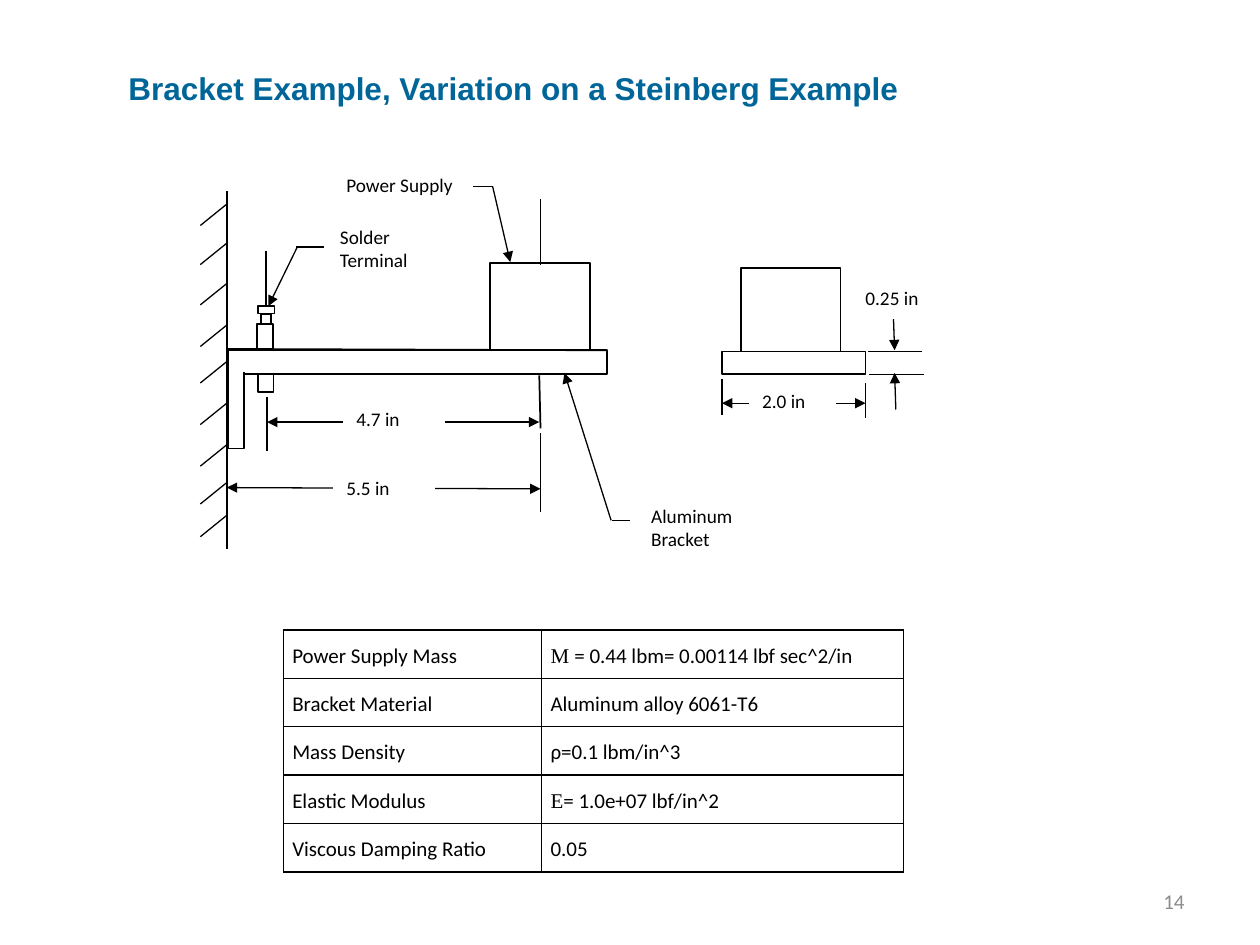
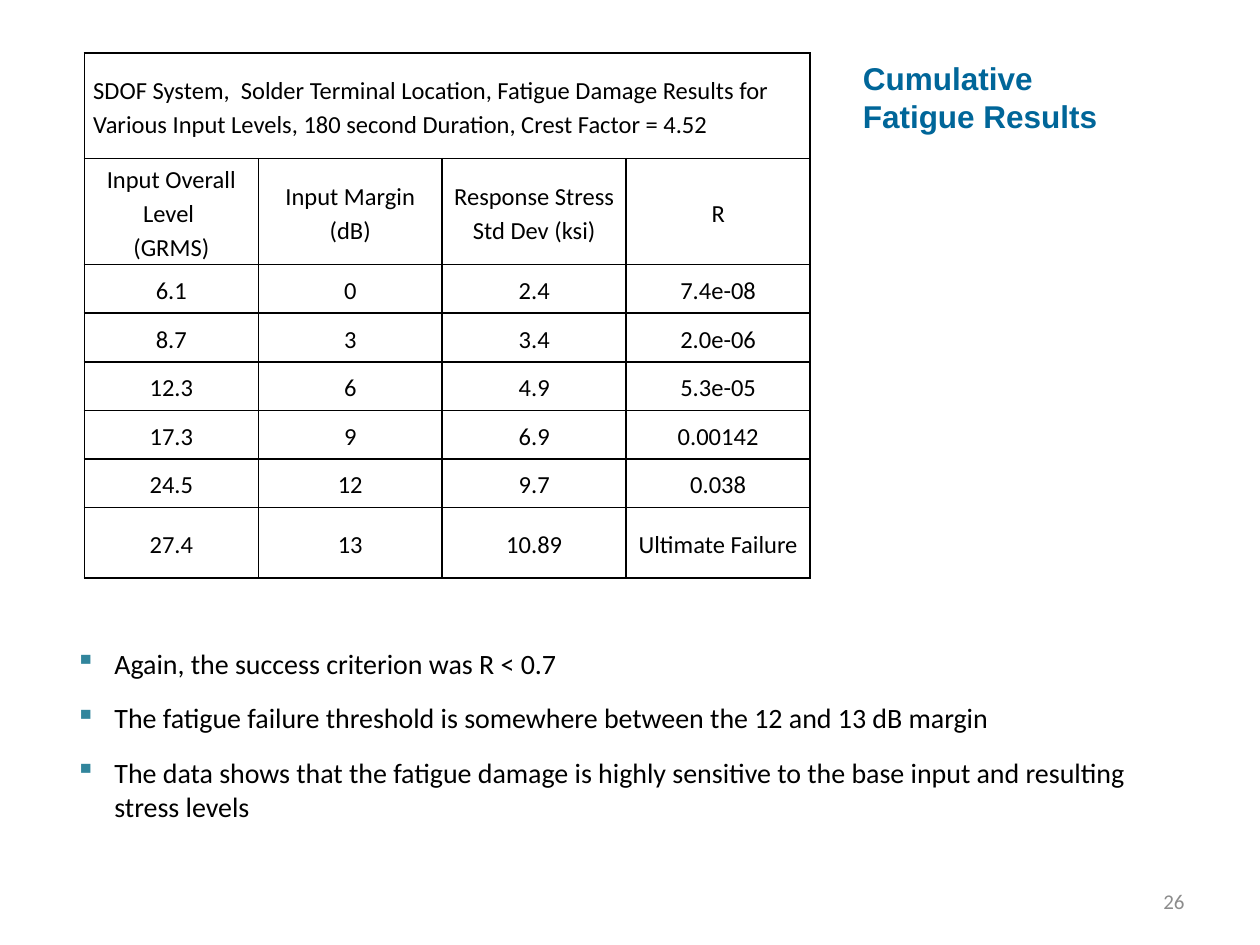
from dataclasses import dataclass

from lxml.etree import SubElement
from pptx import Presentation
from pptx.dml.color import RGBColor
from pptx.enum.shapes import MSO_CONNECTOR, MSO_SHAPE
from pptx.enum.text import MSO_ANCHOR, MSO_AUTO_SIZE, PP_ALIGN
from pptx.oxml.ns import qn
from pptx.slide import Slide
from pptx.table import Table
from pptx.util import Inches, Pt

BLACK = RGBColor(0x00, 0x00, 0x00)
WHITE = RGBColor(0xFF, 0xFF, 0xFF)
TITLE_BLUE = RGBColor(0x00, 0x66, 0x99)
NUMBER_GRAY = RGBColor(0x8C, 0x8C, 0x8C)
BULLET_TEAL = RGBColor(0x31, 0x85, 0x9C)
BODY_FONT = "Calibri"
TITLE_FONT = "Arial"
SYMBOL_FONT = "Times New Roman"
THIN = 0.75
WALL_X = 1.8


@dataclass(frozen=True)
class Run:
    text: str
    font: str = BODY_FONT


@dataclass(frozen=True)
class Box:
    left: float
    top: float
    width: float
    height: float
    outline: RGBColor = BLACK
    weight: float = 1


@dataclass(frozen=True)
class Label:
    text: str
    left: float
    top: float
    width: float
    height: float


@dataclass(frozen=True)
class Line:
    start: tuple[float, float]
    end: tuple[float, float]
    weight: float = THIN
    head: bool = False
    tail: bool = False


PARTS = [
    Box(3.89, 2.09, 0.79, 0.69),
    Box(5.88, 2.13, 0.79, 0.67),
    Box(2.04, 2.57, 0.13, 0.2),
    Box(2.05, 2.81, 0.12, 0.3),
    Box(2.07, 2.49, 0.08, 0.08),
    Box(2.05, 2.43, 0.13, 0.06),
    Box(1.81, 2.78, 3.01, 0.19),
    Box(1.81, 2.78, 0.13, 0.78),
    Box(1.9, 2.79, 0.14, 0.16, WHITE),
    Box(5.73, 2.79, 1.14, 0.18),
]

EDGES_AND_AXES = [
    Line((WALL_X, 1.52), (WALL_X, 4.36), 1),
    Line((4.29, 1.58), (4.29, 2.1), 1),
    Line((4.28, 2.98), (4.29, 3.4), 1),
    Line((2.12, 3.15), (2.12, 3.58), 1),
    Line((2.11, 1.99), (2.11, 2.43), 1),
    Line((1.81, 2.77), (4.81, 2.78), 1),
]

EXTENSIONS = [
    Line((6.89, 2.79), (7.32, 2.79)),
    Line((6.9, 2.97), (7.33, 2.97)),
    Line((5.73, 3.01), (5.73, 3.29)),
    Line((6.87, 3.04), (6.87, 3.32)),
    Line((4.29, 3.44), (4.29, 4.06)),
]

DIMENSIONS = [
    Line((2.12, 3.35), (4.28, 3.35), head=True, tail=True),
    Line((1.8, 3.87), (4.29, 3.88), head=True, tail=True),
    Line((5.73, 3.2), (6.87, 3.2), head=True, tail=True),
    Line((7.09, 2.49), (7.1, 2.78), tail=True),
    Line((7.11, 3.25), (7.1, 2.96), tail=True),
]

LEADERS = [
    Line((3.91, 1.48), (4.05, 2.08), tail=True),
    Line((3.91, 1.48), (3.68, 1.48)),
    Line((2.36, 1.96), (2.13, 2.43), tail=True),
    Line((2.35, 1.96), (2.57, 1.96)),
    Line((4.85, 4.13), (4.48, 2.96), tail=True),
    Line((4.86, 4.13), (5, 4.13)),
]

DIMENSION_GAP = Box(6.06, 3.09, 0.57, 0.26, WHITE, THIN)

LABELS = [
    Label("Power Supply", 2.65, 1.33, 1.1, 0.27),
    Label("Solder Terminal", 2.6, 1.74, 0.94, 0.5),
    Label("Aluminum Bracket", 5.07, 3.95, 0.94, 0.5),
    Label("4.7 in", 2.73, 3.18, 0.8, 0.31),
    Label("5.5 in", 2.65, 3.73, 0.8, 0.31),
    Label("2.0 in", 5.95, 3.04, 0.63, 0.31),
    Label("0.25 in", 6.77, 2.22, 0.77, 0.31),
]

HATCH_TOPS = [1.62, 1.93, 2.25, 2.58, 2.87, 3.2, 3.53, 3.83, 4.09]

PROPERTIES = [
    ("Power Supply Mass", [Run("M ", SYMBOL_FONT), Run("= 0.44 lbm= 0.00114 lbf sec^2/in")]),
    ("Bracket Material", [Run("Aluminum alloy 6061-T6")]),
    ("Mass Density", [Run("ρ=0.1 lbm/in^3")]),
    ("Elastic Modulus", [Run("E", SYMBOL_FONT), Run("= 1.0e+07 lbf/in^2")]),
    ("Viscous Damping Ratio", [Run("0.05")]),
]

RESULTS_CAPTION = (
    "SDOF System,  Solder Terminal Location, Fatigue Damage Results for "
    "Various Input Levels, 180 second Duration, Crest Factor = 4.52"
)
RESULTS = [
    ("Input Overall Level \n(GRMS)", "Input Margin (dB)", "Response Stress Std Dev (ksi)", "R"),
    ("6.1", "0", "2.4", "7.4e-08"),
    ("8.7", "3", "3.4", "2.0e-06"),
    ("12.3", "6", "4.9", "5.3e-05"),
    ("17.3", "9", "6.9", "0.00142"),
    ("24.5", "12", "9.7", "0.038"),
    ("27.4", "13", "10.89", "Ultimate Failure"),
]

CONCLUSIONS = [
    "Again, the success criterion was R < 0.7",
    "The fatigue failure threshold is somewhere between the 12 and 13 dB margin",
    "The data shows that the fatigue damage is highly sensitive to the base input "
    "and resulting stress levels",
]


def add_run(paragraph, content: Run, size: float, color: RGBColor = BLACK, bold: bool = False) -> None:
    run = paragraph.add_run()
    run.text = content.text
    run.font.name = content.font
    run.font.size = Pt(size)
    run.font.color.rgb = color
    run.font.bold = bold


def add_text_box(slide: Slide, left: float, top: float, width: float, height: float):
    shape = slide.shapes.add_textbox(Inches(left), Inches(top), Inches(width), Inches(height))
    shape.text_frame.word_wrap = True
    return shape.text_frame


def add_title(slide: Slide, text: str, left: float, top: float, width: float, height: float) -> None:
    frame = add_text_box(slide, left, top, width, height)
    frame.auto_size = MSO_AUTO_SIZE.SHAPE_TO_FIT_TEXT
    add_run(frame.paragraphs[0], Run(text, TITLE_FONT), 18, TITLE_BLUE, True)


def add_slide_number(slide: Slide, number: int) -> None:
    frame = add_text_box(slide, 7.17, 6.95, 2.33, 0.4)
    frame.vertical_anchor = MSO_ANCHOR.MIDDLE
    frame.paragraphs[0].alignment = PP_ALIGN.RIGHT
    add_run(frame.paragraphs[0], Run(str(number)), 12, NUMBER_GRAY)


def add_box(slide: Slide, box: Box):
    shape = slide.shapes.add_shape(
        MSO_SHAPE.RECTANGLE, Inches(box.left), Inches(box.top), Inches(box.width), Inches(box.height)
    )
    shape.shadow.inherit = False
    shape.fill.solid()
    shape.fill.fore_color.rgb = WHITE
    shape.line.color.rgb = box.outline
    shape.line.width = Pt(box.weight)
    return shape


def add_label(slide: Slide, label: Label) -> None:
    frame = add_box(slide, Box(label.left, label.top, label.width, label.height, WHITE, THIN)).text_frame
    frame.word_wrap = True
    frame.vertical_anchor = MSO_ANCHOR.TOP
    paragraph = frame.paragraphs[0]
    paragraph.alignment = PP_ALIGN.LEFT
    paragraph.space_after = Pt(10)
    add_run(paragraph, Run(label.text), 11)


def add_line(slide: Slide, line: Line) -> None:
    connector = slide.shapes.add_connector(
        MSO_CONNECTOR.STRAIGHT, *(Inches(value) for value in line.start + line.end)
    )
    connector.line.color.rgb = BLACK
    connector.line.width = Pt(line.weight)
    properties = connector.element.spPr
    outline = properties.find(qn("a:ln"))
    for tag, has_arrow in (("a:headEnd", line.head), ("a:tailEnd", line.tail)):
        if has_arrow:
            SubElement(outline, qn(tag), type="triangle")
    SubElement(properties, qn("a:effectLst"))


def add_plain_table(
    slide: Slide, row_count: int, widths: list[float], left: float, top: float, height: float
) -> Table:
    table = slide.shapes.add_table(
        row_count, len(widths), Inches(left), Inches(top), Inches(sum(widths)), Inches(height)
    ).table
    table.first_row = table.horz_banding = False
    for column, width in zip(table.columns, widths):
        column.width = Inches(width)
    for cell in table.iter_cells():
        cell.margin_left = cell.margin_right = Inches(0.07)
        cell.margin_top = cell.margin_bottom = 0
        cell.vertical_anchor = MSO_ANCHOR.MIDDLE
        properties = cell._tc.get_or_add_tcPr()
        for side in ("L", "R", "T", "B"):
            border = SubElement(properties, qn(f"a:ln{side}"), w=str(Pt(1)))
            fill = SubElement(border, qn("a:solidFill"))
            SubElement(fill, qn("a:srgbClr"), val=str(BLACK))
        cell.fill.background()
    return table


def fill_cell(cell, paragraphs: list[list[Run]], size: float, alignment: PP_ALIGN = PP_ALIGN.LEFT) -> None:
    for index, runs in enumerate(paragraphs):
        frame = cell.text_frame
        paragraph = frame.add_paragraph() if index else frame.paragraphs[0]
        paragraph.alignment = alignment
        paragraph.line_spacing = 1.15
        for run in runs:
            add_run(paragraph, run, size)


def add_bullets(slide: Slide, texts: list[str]) -> None:
    frame = add_text_box(slide, 0.5, 5.08, 8.58, 1.51)
    frame.auto_size = MSO_AUTO_SIZE.SHAPE_TO_FIT_TEXT
    for index, text in enumerate(texts):
        paragraph = frame.add_paragraph() if index else frame.paragraphs[0]
        paragraph.space_before = paragraph.space_after = Pt(6)
        properties = paragraph._p.get_or_add_pPr()
        properties.set("marL", str(Inches(0.31)))
        properties.set("indent", str(-Inches(0.31)))
        color = SubElement(properties, qn("a:buClr"))
        SubElement(color, qn("a:srgbClr"), val=str(BULLET_TEAL))
        SubElement(properties, qn("a:buChar"), char="▪")
        add_run(paragraph, Run(text), 16)


def build_bracket_slide(slide: Slide) -> None:
    add_slide_number(slide, 14)
    add_title(slide, "Bracket Example, Variation on a Steinberg Example", 0.92, 0.5, 7.42, 0.4)
    for part in PARTS:
        add_box(slide, part)
    for line in EDGES_AND_AXES + EXTENSIONS + DIMENSIONS + LEADERS:
        add_line(slide, line)
    add_box(slide, DIMENSION_GAP)
    for label in LABELS:
        add_label(slide, label)
    for top in HATCH_TOPS:
        add_line(slide, Line((WALL_X, top), (WALL_X - 0.21, top + 0.17)))
    table = add_plain_table(slide, len(PROPERTIES), [2.05, 2.87], 2.25, 5, 1.92)
    for row, (name, value) in enumerate(PROPERTIES):
        fill_cell(table.cell(row, 0), [[Run(name)]], 12)
        fill_cell(table.cell(row, 1), [value], 12)


def build_results_slide(slide: Slide) -> None:
    add_slide_number(slide, 26)
    height, tall_row, last_row = 4.17, 0.84, 0.56
    table = add_plain_table(slide, len(RESULTS) + 1, [1.38, 1.46, 1.46, 1.46], 0.67, 0.42, height)
    short_row = (height - 2 * tall_row - last_row) / 5
    for row, row_height in zip(table.rows, [tall_row] * 2 + [short_row] * 5 + [last_row]):
        row.height = Inches(row_height)
    table.cell(0, 0).merge(table.cell(0, 3))
    fill_cell(table.cell(0, 0), [[Run(RESULTS_CAPTION)]], 14)
    for row, values in enumerate(RESULTS, start=1):
        for column, value in enumerate(values):
            paragraphs = [[Run(text)] for text in value.split("\n")]
            fill_cell(table.cell(row, column), paragraphs, 14, PP_ALIGN.CENTER)
    add_bullets(slide, CONCLUSIONS)
    add_title(slide, "Cumulative Fatigue Results", 6.75, 0.42, 2.08, 0.71)


def main() -> None:
    presentation = Presentation()
    presentation.slide_width = Inches(10)
    presentation.slide_height = Inches(7.5)
    for build in (build_bracket_slide, build_results_slide):
        build(presentation.slides.add_slide(presentation.slide_layouts[6]))
    presentation.save("out.pptx")


if __name__ == "__main__":
    main()
